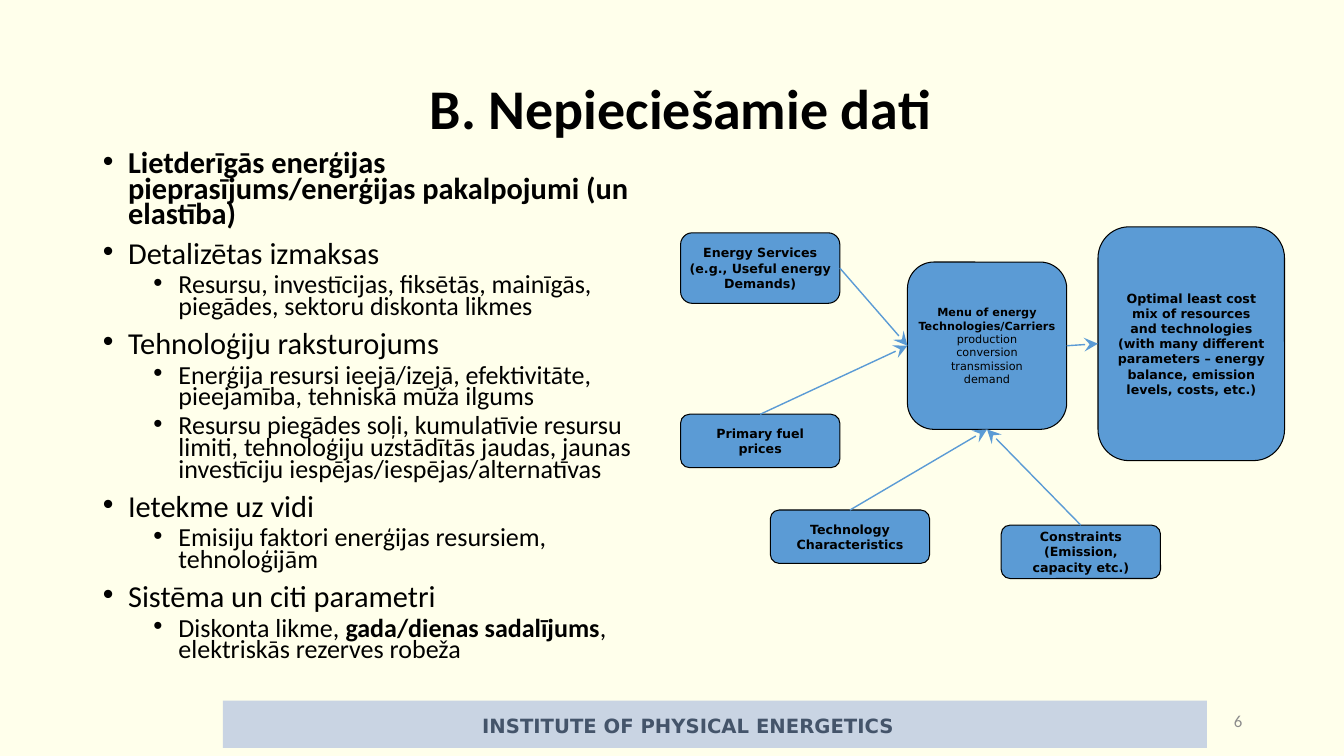
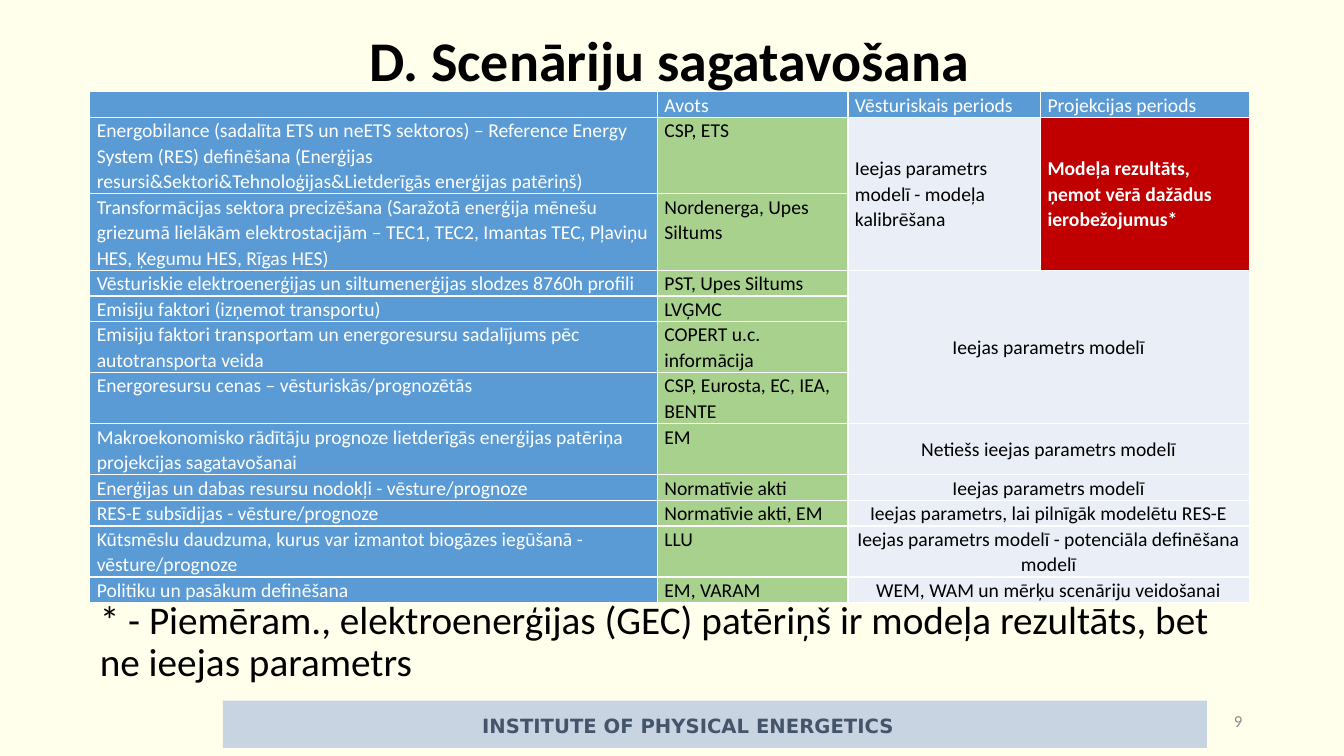
from dataclasses import dataclass
from typing import Any, NamedTuple

from lxml import etree
from pptx import Presentation
from pptx import util as u
from pptx.dml.color import RGBColor
from pptx.enum import shapes as es
from pptx.enum import text as et
from pptx.oxml.ns import qn

LEFT, MID, RIGHT = et.PP_ALIGN.LEFT, et.PP_ALIGN.CENTER, et.PP_ALIGN.RIGHT
TOP, HALF = et.MSO_ANCHOR.TOP, et.MSO_ANCHOR.MIDDLE


# Theme: colours, fonts and type sizes
@dataclass(frozen=True)
class Theme:
    page: str = "FFFFEB"
    band: str = "C9D4E3"
    slate: str = "44546A"
    blue: str = "5B9BD5"
    green: str = "A9D18E"
    pale: str = "EAEFF7"
    red: str = "C00000"
    grey: str = "8C8C8C"
    ink: str = "000000"
    white: str = "FFFFFF"
    face: str = "Calibri"
    sans: str = "DejaVu Sans"
    title: float = 40
    note: float = 28
    main: float = 21.7
    sub: float = 18.6
    foot: float = 14
    cell: float = 14
    num: float = 12
    box: float = 9
    menu: float = 8


T = Theme()


class Run(NamedTuple):
    text: str
    bold: bool = False


@dataclass(frozen=True)
class Line:
    runs: tuple[Run, ...]
    level: int = 0


class Area(NamedTuple):
    x: float
    y: float
    w: float
    h: float

    def emu(self) -> list[int]:
        return [u.Inches(v) for v in self]


class Box(NamedTuple):
    key: str
    area: Area
    lines: list[Line]
    size: float = T.box
    wrap: bool = False


class Link(NamedTuple):
    start: str
    side: int
    end: str
    into: int


class Span(NamedTuple):
    row: int
    col: int
    rows: int
    cols: int
    text: str
    fill: str = T.pale
    ink: str = T.ink
    bold: bool = False
    align: Any = MID


# Helpers
def rgb(code: str) -> RGBColor:
    return RGBColor.from_string(code)


def add(node: Any, tag: str, **attrs: Any) -> Any:
    return etree.SubElement(node, qn(tag), {k: str(v) for k, v in attrs.items()})


def line(text: str, level: int = 0, bold: bool = False) -> Line:
    return Line((Run(text, bold),), level)


def lines(text: str, bold: bool = True) -> list[Line]:
    return [line(part, bold=bold) for part in text.split("\n")]


def put(frame: Any, rows: list[Line], *, sizes: tuple[float, ...], ink: str = T.ink,
        face: str = T.face, align: Any = LEFT, anchor: Any = TOP, lead: float = 1.0,
        gaps: tuple[float, ...] = (0,), bullet: bool = False, wrap: bool = True) -> None:
    """Fill a text frame; sizes and gaps are given per level."""
    frame.word_wrap = wrap
    frame.auto_size = et.MSO_AUTO_SIZE.NONE
    frame.vertical_anchor = anchor
    for i, row in enumerate(rows):
        par = frame.add_paragraph() if i else frame.paragraphs[0]
        props = par._p.get_or_add_pPr()
        if bullet:
            props.set("marL", str(u.Inches(0.25 + 0.5 * row.level)))
            props.set("indent", str(u.Inches(-0.25)))
            add(props, "a:buChar", char="•")
        else:
            props.set("marL", "0")
            props.set("indent", "0")
            add(props, "a:buNone")
        par.level = row.level
        par.alignment, par.line_spacing = align, lead
        par.space_before = u.Pt(gaps[row.level] if i else 0)
        for item in row.runs:
            run = par.add_run()
            run.text = item.text
            font = run.font
            font.name, font.size, font.bold = face, u.Pt(sizes[row.level]), item.bold
            font.color.rgb = rgb(ink)


def shape(slide: Any, kind: Any, area: Area, fill: str, edge: str = "") -> Any:
    form = slide.shapes.add_shape(kind, *area.emu())
    form.shadow.inherit = False
    form.fill.solid()
    form.fill.fore_color.rgb = rgb(fill)
    if edge:
        form.line.color.rgb = rgb(edge)
        form.line.width = u.Pt(0.75)
    else:
        form.line.fill.background()
    return form


def place(form: Any, area: Area) -> Any:
    form.left, form.top, form.width, form.height = area.emu()
    return form.text_frame


# Shared frame: title, footer band, page number
def page(deck: Any, title: str, head: Area, num: int) -> Any:
    slide = deck.slides.add_slide(deck.slide_layouts[1])
    shape(slide, es.MSO_SHAPE.RECTANGLE, Area(2.21, 6.95, 9.76, 0.47), T.band)
    foot = slide.shapes.add_textbox(*Area(2.94, 7.03, 7.77, 0.34).emu())
    put(foot.text_frame, lines("INSTITUTE OF PHYSICAL ENERGETICS"), sizes=(T.foot,),
        ink=T.slate, face=T.sans, align=MID)
    put(place(slide.shapes.title, head), lines(title), sizes=(T.title,), align=MID,
        anchor=HALF, lead=0.9)
    mark = slide.shapes.add_textbox(*Area(9.42, 6.95, 3, 0.4).emu())
    put(mark.text_frame, [line(str(num))], sizes=(T.num,), ink=T.grey, align=RIGHT,
        anchor=HALF)
    return slide


# Slide 1: data needs and flow diagram
NEEDS = [
    line("Lietderīgās enerģijas pieprasījums/enerģijas pakalpojumi (un elastība)", bold=True),
    line("Detalizētas izmaksas"),
    line("Resursu, investīcijas, fiksētās, mainīgās, piegādes, sektoru diskonta likmes", 1),
    line("Tehnoloģiju raksturojums"),
    line("Enerģija resursi ieejā/izejā, efektivitāte, pieejamība, tehniskā mūža ilgums", 1),
    line("Resursu piegādes soļi, kumulatīvie resursu limiti, tehnoloģiju uzstādītās jaudas, "
         "jaunas investīciju iespējas/iespējas/alternatīvas", 1),
    line("Ietekme uz vidi"),
    line("Emisiju faktori enerģijas resursiem, tehnoloģijām", 1),
    line("Sistēma un citi parametri"),
    Line((Run("Diskonta likme, "), Run("gada/dienas sadalījums", True),
          Run(", elektriskās rezerves robeža")), 1),
]
WIDE, LOW = 1.58, 0.53
BOXES = [
    Box("needs", Area(6.75, 2.31, WIDE, 0.7),
        lines("Energy Services\n(e.g., Useful energy\nDemands)")),
    Box("fuel", Area(6.75, 4.11, WIDE, LOW), lines("Primary fuel\nprices")),
    Box("menu", Area(9, 2.6, WIDE, 1.66),
        lines("Menu of energy\nTechnologies/Carriers")
        + lines("production\nconversion\ntransmission\ndemand", False), T.menu),
    Box("limits", Area(9.93, 5.21, WIDE, LOW),
        lines("Constraints\n(Emission,\ncapacity etc.)")),
    Box("best", Area(10.89, 2.25, 1.85, 2.32),
        lines("Optimal least cost mix of resources and technologies (with many different "
              "parameters – energy balance, emission levels, costs, etc.)"), wrap=True),
    Box("tech", Area(7.64, 5.06, WIDE, LOW), lines("Technology\nCharacteristics")),
]
N, W, S, E = range(4)  # connection sites of a box
LINKS = [Link("limits", N, "menu", S), Link("needs", E, "menu", W),
         Link("fuel", N, "menu", W), Link("menu", E, "best", W),
         Link("tech", N, "menu", S)]


def join(slide: Any, forms: dict[str, Any], link: Link) -> None:
    wire = slide.shapes.add_connector(es.MSO_CONNECTOR.STRAIGHT, 0, 0, 0, 0)
    wire.begin_connect(forms[link.start], link.side)
    wire.end_connect(forms[link.end], link.into)
    wire.line.color.rgb = rgb(T.blue)
    wire.line.width = u.Pt(1)
    add(wire.line._get_or_add_ln(), "a:tailEnd", type="stealth", w="lg", len="lg")
    add(wire._element.spPr, "a:effectLst")


def needs(deck: Any) -> None:
    slide = page(deck, "B. Nepieciešamie dati", Area(1, 0.38, 11.5, 1.45), 6)
    body = place(slide.placeholders[1], Area(0.92, 1.47, 5.67, 5.28))
    put(body, NEEDS, sizes=(T.main, T.sub), lead=0.7, gaps=(10, 5), bullet=True)
    forms: dict[str, Any] = {}
    for box in BOXES:
        form = shape(slide, es.MSO_SHAPE.FLOWCHART_ALTERNATE_PROCESS, box.area, T.blue, T.ink)
        put(form.text_frame, box.lines, sizes=(box.size,), face=T.sans, align=MID,
            anchor=HALF, wrap=box.wrap)
        forms[box.key] = form
    for link in LINKS:
        join(slide, forms, link)


# Slide 2: scenario table
HEADS = ("", "Avots", "Vēsturiskais periods", "Projekcijas periods")
COLS = (5.63, 1.89, 1.91, 2.07)
ROWS = [  # text, source, lines of text
    ("Energobilance (sadalīta ETS un neETS sektoros) – Reference Energy System (RES) definēšana "
     "(Enerģijas resursi&Sektori&Tehnoloģijas&Lietderīgās enerģijas patēriņš)", "CSP, ETS", 3),
    ("Transformācijas sektora precizēšana (Saražotā enerģija mēnešu griezumā lielākām "
     "elektrostacijām – TEC1, TEC2, Imantas TEC, Pļaviņu HES, Ķegumu HES, Rīgas HES)",
     "Nordenerga, Upes Siltums", 3),
    ("Vēsturiskie elektroenerģijas un siltumenerģijas slodzes 8760h profili",
     "PST, Upes Siltums", 1),
    ("Emisiju faktori (izņemot transportu)", "LVĢMC", 1),
    ("Emisiju faktori transportam un energoresursu sadalījums pēc autotransporta veida",
     "COPERT u.c. informācija", 2),
    ("Energoresursu cenas – vēsturiskās/prognozētās", "CSP, Eurosta, EC, IEA, BENTE", 2),
    ("Makroekonomisko rādītāju prognoze lietderīgās enerģijas patēriņa projekcijas sagatavošanai",
     "EM", 2),
    ("Enerģijas un dabas resursu nodokļi - vēsture/prognoze", "Normatīvie akti", 1),
    ("RES-E subsīdijas - vēsture/prognoze", "Normatīvie akti, EM", 1),
    ("Kūtsmēslu daudzuma, kurus var izmantot biogāzes iegūšanā - vēsture/prognoze", "LLU", 2),
    ("Politiku un pasākum definēšana", "EM, VARAM", 1),
]
SPANS = [
    Span(1, 2, 2, 1, "Ieejas parametrs modelī - modeļa kalibrēšana", align=LEFT),
    Span(1, 3, 2, 1, "Modeļa rezultāts, ņemot vērā dažādus ierobežojumus*", T.red, T.white,
         True, LEFT),
    Span(3, 2, 4, 2, "Ieejas parametrs modelī"),
    Span(7, 2, 1, 2, "Netiešs ieejas parametrs modelī"),
    Span(8, 2, 1, 2, "Ieejas parametrs modelī"),
    Span(9, 2, 1, 2, "Ieejas parametrs, lai pilnīgāk modelētu RES-E"),
    Span(10, 2, 1, 2, "Ieejas parametrs modelī - potenciāla definēšana modelī"),
    Span(11, 2, 1, 2, "WEM, WAM un mērķu scenāriju veidošanai"),
]


def paint(cell: Any, fill: str) -> None:
    props = cell._tc.get_or_add_tcPr()
    for side in "LRTB":
        edge = add(props, f"a:ln{side}", w=u.Pt(1))
        add(add(edge, "a:solidFill"), "a:srgbClr", val=T.white)
    cell.fill.solid()
    cell.fill.fore_color.rgb = rgb(fill)
    cell.margin_left = cell.margin_right = u.Inches(0.07)
    cell.margin_top = cell.margin_bottom = 0


def write(cell: Any, text: str, ink: str, bold: bool = False, align: Any = LEFT,
          anchor: Any = TOP) -> None:
    if text:
        put(cell.text_frame, lines(text, bold), sizes=(T.cell,), ink=ink, align=align, lead=1.07)
    else:
        add(cell.text_frame.paragraphs[0]._p, "a:endParaRPr", sz=int(T.cell * 100))
    cell.vertical_anchor = anchor


def plans(deck: Any) -> None:
    slide = page(deck, "D. Scenāriju sagatavošana", Area(0.23, 0.13, 12.82, 1), 9)
    area = Area(0.89, 0.91, sum(COLS), 4.9)
    grid = slide.shapes.add_table(len(ROWS) + 1, len(COLS), *area.emu()).table
    grid.first_row = grid.horz_banding = False
    for col, wide in zip(grid.columns, COLS):
        col.width = u.Inches(wide)
    for row, count in zip(grid.rows, [1] + [item[2] for item in ROWS]):
        row.height = u.Inches(0.25 * count)
    for c, head in enumerate(HEADS):
        paint(grid.cell(0, c), T.blue)
        write(grid.cell(0, c), head, T.white)
    for r, (text, source, _) in enumerate(ROWS, 1):
        for c, (word, fill, ink) in enumerate([(text, T.blue, T.white),
                                               (source, T.green, T.ink)]):
            paint(grid.cell(r, c), fill)
            write(grid.cell(r, c), word, ink)
    for s in SPANS:
        for r in range(s.row, s.row + s.rows):
            for c in range(s.col, s.col + s.cols):
                paint(grid.cell(r, c), s.fill)
        cell = grid.cell(s.row, s.col)
        cell.merge(grid.cell(s.row + s.rows - 1, s.col + s.cols - 1))
        write(cell, s.text, s.ink, s.bold, s.align, HALF)
    note = place(slide.placeholders[1], Area(0.89, 5.91, 11.45, 0.96))
    put(note, [line("* - Piemēram., elektroenerģijas (GEC) patēriņš ir modeļa rezultāts, "
                    "bet ne ieejas parametrs")], sizes=(T.note,), lead=0.9)


def main() -> None:
    deck = Presentation()
    deck.slide_width, deck.slide_height = u.Inches(13.33), u.Inches(7.5)
    back = deck.slide_master.background.fill
    back.solid()
    back.fore_color.rgb = rgb(T.page)
    needs(deck)
    plans(deck)
    deck.save("out.pptx")


if __name__ == "__main__":
    main()
